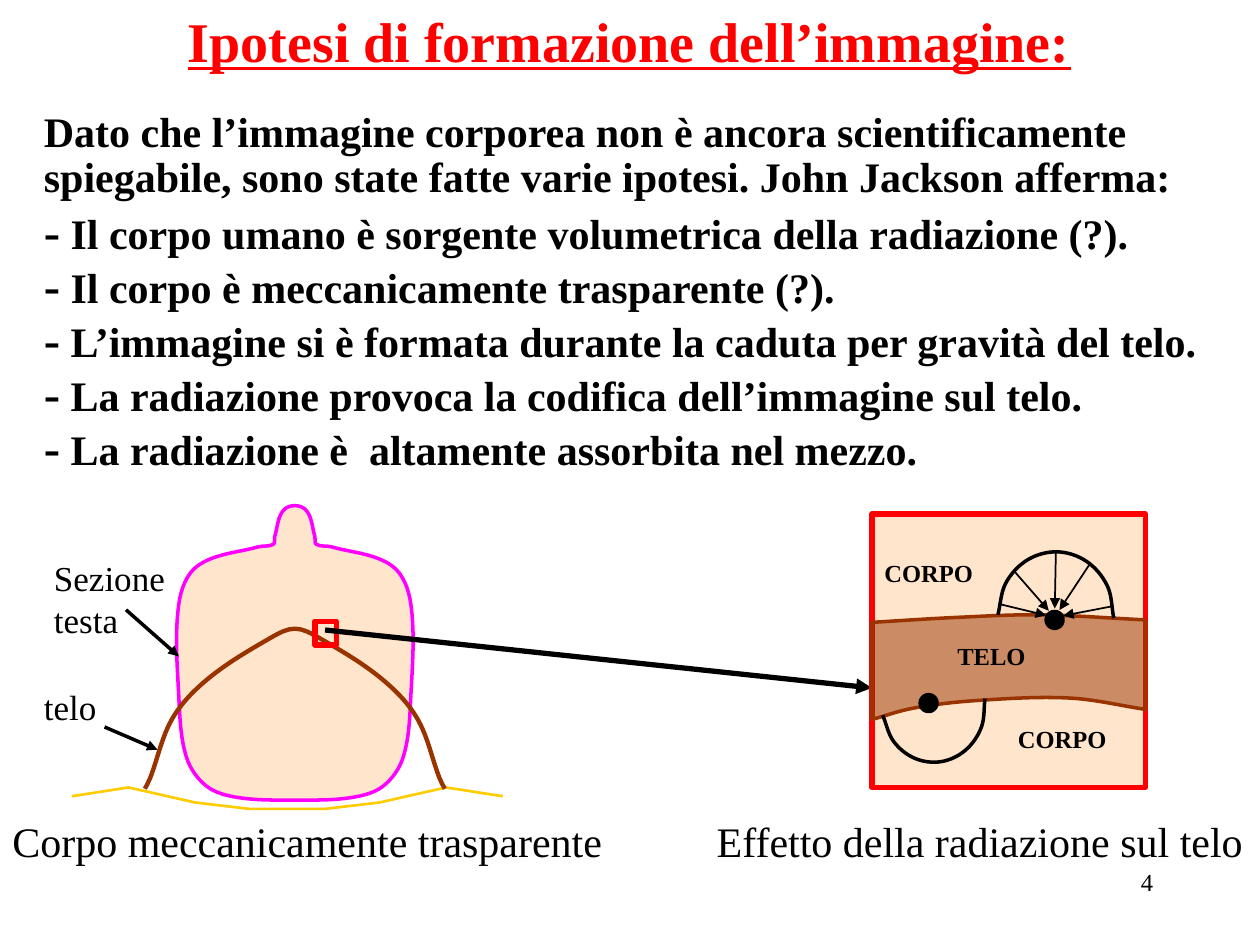
"""Build the slide on the hypotheses of image formation."""
import math
from dataclasses import dataclass
from typing import NamedTuple, Optional

import lxml.etree
import pptx
import pptx.dml.color
import pptx.enum.shapes
import pptx.enum.text
import pptx.oxml.ns
import pptx.util

qn = pptx.oxml.ns.qn
Kind = pptx.enum.shapes.MSO_SHAPE
Align = pptx.enum.text.PP_ALIGN


@dataclass(frozen=True)
class Theme:
    font: str = "Times New Roman"
    ink: str = "000000"
    red: str = "FF0000"
    skin: str = "FFCC99"
    cloth: str = "993300"
    outline: str = "FF00FF"
    ground: str = "FFCC00"
    title: int = 32
    dash: int = 28
    body: int = 24
    label: int = 20
    small: int = 14


class Point(NamedTuple):
    x: float
    y: float


class Box(NamedTuple):
    left: float
    top: float
    width: float
    height: float


class Pen(NamedTuple):
    color: str
    weight: float
    fill: Optional[str] = None


class Ellipse(NamedTuple):
    center: Point
    across: float
    down: float

    def at(self, degrees: float) -> Point:
        """Return the point at a clockwise angle from the right."""
        angle = math.radians(degrees)
        return Point(self.center.x + self.across * math.cos(angle), self.center.y + self.down * math.sin(angle))

    def arc(self, first: int, last: int, steps: int = 6) -> list:
        """Return evenly spaced points between two angles."""
        return [self.at(first + (last - first) * step / steps) for step in range(steps + 1)]


THEME = Theme()
HEAD_AXIS, GROUND_AXIS = 2.34, 2.28
NOSE = [(0.08, 4.04), (0.16, 4.26), (0.17, 4.32)]
CHEEK = [(0.29, 4.34), (0.77, 4.49), (0.92, 4.79), (0.92, 5.54)]
NAPE = [(0.86, 6.01), (0.7, 6.24), (0.45, 6.33), (0, 6.35)]
DRAPE = [(0, 4.99), (0.17, 5.05), (0.68, 5.38), (0.97, 5.7), (1.15, 6.18), (1.19, 6.26)]
GROUND = [(0.3, 6.42), (0.73, 6.37), (1.26, 6.25), (1.71, 6.32)]

FRAME = Box(6.92, 4.08, 2.17, 2.17)
FRAME_RIGHT = FRAME.left + FRAME.width
CLOTH_TOP = [Point(FRAME.left, 4.94), Point(7.6, 4.9), Point(8.25, 4.88), Point(FRAME_RIGHT, 4.92)]
CLOTH_BOTTOM = [Point(FRAME.left, 5.71), Point(7.25, 5.62), Point(7.75, 5.56), Point(8.49, 5.54),
                Point(FRAME_RIGHT, 5.63)]
UPPER_SOURCE = Ellipse(Point(8.38, 4.88), 0.46, 0.5)
LOWER_SOURCE = Ellipse(Point(7.41, 5.6), 0.41, 0.45)
UPPER_DOT, LOWER_DOT, DOT_SIZE = Point(8.37, 4.92), Point(7.37, 5.58), 0.08
RAY_ANGLES, RAY_TARGET, RAY_GAP = (190, 224, 270, 306, 352), Point(8.37, 4.9), 0.07

INTRO = ("Dato che l’immagine corporea non è ancora scientificamente spiegabile, "
         "sono state fatte varie ipotesi. John Jackson afferma:")
HYPOTHESES = [
    "Il corpo umano è sorgente volumetrica della radiazione (?).",
    "Il corpo è meccanicamente trasparente (?).",
    "L’immagine si è formata durante la caduta per gravità del telo.",
    "La radiazione provoca la codifica dell’immagine sul telo.",
    "La radiazione è  altamente assorbita nel mezzo.",
]


def inches(value: float) -> int:
    """Return a length in inches by way of centimetres."""
    return pptx.util.Cm(value * 2.54)


def rgb(color: str):
    """Return a colour object for a hex value."""
    return pptx.dml.color.RGBColor.from_string(color)


def mirrored(half: list, axis: float) -> list:
    """Return a left-to-right outline from (offset, y) pairs running outward from an axis."""
    left = [Point(axis - offset, y) for offset, y in reversed(half)]
    right = [Point(axis + offset, y) for offset, y in half]
    return left + right[half[0][0] == 0:]


def toward(start: Point, end: Point, distance: float) -> Point:
    """Return the point at a distance from start in the direction of end."""
    share = distance / math.dist(start, end)
    return Point(start.x + (end.x - start.x) * share, start.y + (end.y - start.y) * share)


def smooth(points: list) -> list:
    """Return a path with two Bézier handles per span; a repeated point makes a corner."""
    last = len(points) - 1
    closed = points[0] == points[last]
    before = [points[last - 1] if closed else points[0]] + points[:last]
    after = points[1:] + [points[1] if closed else points[last]]
    directions = [Point(b.x - a.x, b.y - a.y) for a, b in zip(before, after)]
    curve = [points[0]]
    for index in range(last):
        start, end = points[index:index + 2]
        reach = math.dist(start, end) / 3
        leave, arrive = directions[index:index + 2]
        curve += [toward(start, Point(start.x + leave.x, start.y + leave.y), reach),
                  toward(end, Point(end.x - arrive.x, end.y - arrive.y), reach), end]
    return curve


def paint(shape, pen: Pen) -> None:
    """Set the line and the half-transparent fill of a shape."""
    shape.shadow.inherit = False
    shape.line.color.rgb = rgb(pen.color)
    shape.line.width = pptx.util.Pt(pen.weight)
    if pen.fill is None:
        shape.fill.background()
        return
    shape.fill.solid()
    shape.fill.fore_color.rgb = rgb(pen.fill)
    tint = shape.fill._xPr.find(qn("a:solidFill"))[0]
    lxml.etree.SubElement(tint, qn("a:alpha"), val="50000")


def draw_path(slide, points: list, pen: Pen, curved: bool = True) -> None:
    """Draw a freeform through points, closed if it ends where it starts."""
    path = smooth(points) if curved else points
    start, *rest = [(inches(x), inches(y)) for x, y in path]
    builder = slide.shapes.build_freeform(*start, scale=1.0)
    builder.add_line_segments(rest, close=points[0] == points[-1])
    shape = builder.convert_to_shape()
    segments = list(shape._element.iter(qn("a:lnTo"))) if curved else []
    for first in range(0, len(rest) if curved else 0, 3):
        curve = lxml.etree.Element(qn("a:cubicBezTo"))
        segments[first].addprevious(curve)
        for segment in segments[first:first + 3]:
            curve.append(segment[0])
            segment.getparent().remove(segment)
    paint(shape, pen)


def draw_shape(slide, kind, box: Box, pen: Pen) -> None:
    """Draw a preset shape."""
    paint(slide.shapes.add_shape(kind, *map(inches, box)), pen)


def draw_arrow(slide, start: Point, end: Point, weight: float) -> None:
    """Draw a straight arrow."""
    arrow = slide.shapes.add_connector(pptx.enum.shapes.MSO_CONNECTOR.STRAIGHT, *map(inches, (*start, *end)))
    arrow.line.color.rgb = rgb(THEME.ink)
    arrow.line.width = pptx.util.Pt(weight)
    lxml.etree.SubElement(arrow.line._get_or_add_ln(), qn("a:tailEnd"), type="triangle")
    lxml.etree.SubElement(arrow._element.spPr, qn("a:effectLst"))


def style(paragraph, size: int, bold: bool = False, color: str = THEME.ink) -> None:
    """Set the font of a paragraph."""
    font = paragraph.font
    font.name, font.size, font.bold = THEME.font, pptx.util.Pt(size), bold
    font.color.rgb = rgb(color)


def add_text(slide, box: Box, lines: list, size: int, bold: bool = False):
    """Add a wrapped text box and return its paragraphs."""
    frame = slide.shapes.add_textbox(*map(inches, box)).text_frame
    frame.word_wrap, frame.margin_bottom = True, 0
    frame.text = "\n".join(lines)
    for paragraph in frame.paragraphs:
        style(paragraph, size, bold)
    return frame.paragraphs


def add_title(slide, text: str) -> None:
    """Fill and place the title."""
    title = slide.shapes.title
    title.left, title.top, title.width, title.height = map(inches, Box(0.33, 0, 9.33, 0.63))
    frame = title.text_frame
    frame.text = text
    frame.auto_size = pptx.enum.text.MSO_AUTO_SIZE.NONE
    frame.vertical_anchor = pptx.enum.text.MSO_ANCHOR.TOP
    heading = frame.paragraphs[0]
    heading.alignment = Align.CENTER
    style(heading, THEME.title, True, THEME.red)
    heading.font.underline = True


def add_hypotheses(slide) -> None:
    """Write the introduction and the dashed list."""
    lines = [INTRO] + [""] * len(HYPOTHESES)
    intro, *items = add_text(slide, Box(0.25, 0.83, 9.58, 3.11), lines, THEME.body, True)
    intro.line_spacing = 0.9
    for item, hypothesis in zip(items, HYPOTHESES):
        item.line_spacing, item.space_before = 0.5, pptx.util.Pt(THEME.dash / 2)
        dash = item.add_run()
        dash.text, dash.font.size = "-", pptx.util.Pt(THEME.dash)
        item.add_run().text = " " + hypothesis


def draw_head_section(slide) -> None:
    """Draw the head under the cloth, with its labels and pointers."""
    head = mirrored(NOSE + CHEEK + NAPE, HEAD_AXIS)
    draw_path(slide, head, Pen(THEME.outline, 2, THEME.skin))
    draw_path(slide, mirrored(GROUND, GROUND_AXIS), Pen(THEME.ground, 1.5), curved=False)
    draw_path(slide, mirrored(DRAPE, HEAD_AXIS), Pen(THEME.cloth, 2.5))
    draw_shape(slide, Kind.RECTANGLE, Box(2.5, 4.93, 0.17, 0.19), Pen(THEME.red, 3))
    add_text(slide, Box(0.25, 5.39, 0.83, 0.38), ["telo"], THEME.label)
    add_text(slide, Box(0.33, 4.37, 1.08, 0.72), ["Sezione testa"], THEME.label)
    draw_arrow(slide, Point(0.83, 5.77), Point(1.25, 5.95), 2)
    draw_arrow(slide, Point(1, 4.84), Point(1.42, 5.21), 2)
    draw_arrow(slide, Point(2.58, 5), Point(FRAME.left, 5.46), 3)


def draw_detail(slide) -> None:
    """Draw the enlarged cloth between two body layers, with its radiation."""
    draw_shape(slide, Kind.RECTANGLE, FRAME, Pen(THEME.red, 3, THEME.skin))
    upper_half = CLOTH_BOTTOM[:1] + CLOTH_TOP[:1] + CLOTH_TOP
    lower_half = CLOTH_BOTTOM + CLOTH_BOTTOM[-1:] + CLOTH_TOP[-1:]
    for half in (upper_half, lower_half):
        draw_path(slide, half, Pen(THEME.cloth, 2, THEME.cloth))
    for arc in (LOWER_SOURCE.arc(-7, 170), UPPER_SOURCE.arc(180, 363)):
        draw_path(slide, arc, Pen(THEME.ink, 2))
    for x, y in (LOWER_DOT, UPPER_DOT):
        dot = Box(x - DOT_SIZE / 2, y - DOT_SIZE / 2, DOT_SIZE, DOT_SIZE)
        draw_shape(slide, Kind.OVAL, dot, Pen(THEME.ink, 6))
    for start in map(UPPER_SOURCE.at, RAY_ANGLES):
        draw_arrow(slide, start, toward(RAY_TARGET, start, RAY_GAP), 1)
    layers = add_text(slide, Box(FRAME.left, 4.38, 2.08, 1.68), ["CORPO", "TELO", "CORPO"], THEME.small, True)
    for layer, indent in zip(layers[1:], (0.58, 1.06)):
        layer.space_before = pptx.util.Pt(30.6)
        layer._p.get_or_add_pPr().set("marL", str(inches(indent)))


def add_captions(slide) -> None:
    """Write the two captions on one tabbed line, and the page number."""
    captions = "Corpo meccanicamente trasparente\tEffetto della radiazione sul telo"
    line = add_text(slide, Box(0, 6.42, 10, 0.45), [captions], THEME.body)[0]
    tabs = lxml.etree.Element(qn("a:tabLst"))
    lxml.etree.SubElement(tabs, qn("a:tab"), pos=str(inches(5.59)), algn="l")
    line._p.pPr.insert(0, tabs)
    add_text(slide, Box(7.17, 6.83, 2.08, 0.5), ["4"], THEME.small)[0].alignment = Align.RIGHT


def main() -> None:
    """Build and save the slide."""
    deck = pptx.Presentation()
    deck.slide_width, deck.slide_height = inches(10), inches(7.5)
    slide = deck.slides.add_slide(deck.slide_layouts[5])
    add_title(slide, "Ipotesi di formazione dell’immagine:")
    add_hypotheses(slide)
    draw_head_section(slide)
    draw_detail(slide)
    add_captions(slide)
    deck.save("out.pptx")


if __name__ == "__main__":
    main()
